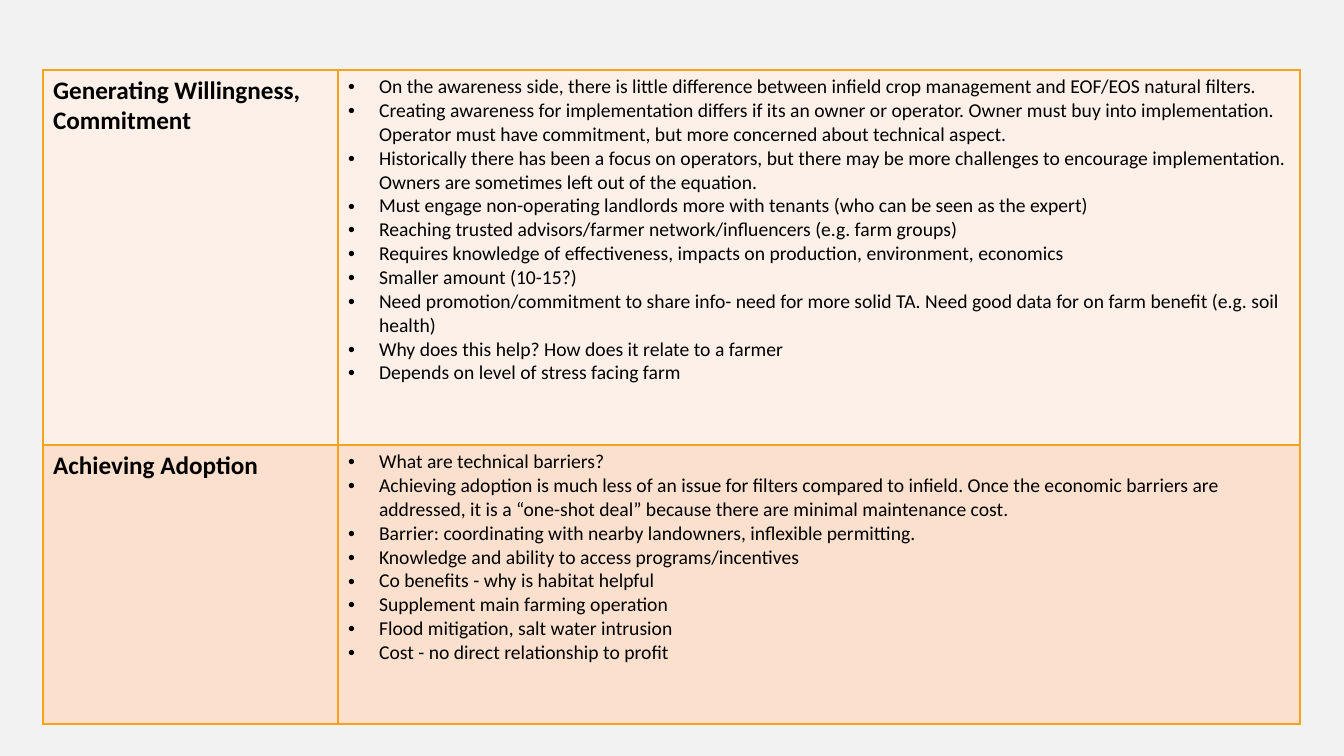
from dataclasses import dataclass

from lxml.etree import SubElement
from pptx import Presentation
from pptx.dml.color import RGBColor as Rgb
from pptx.oxml.ns import qn
from pptx.util import Pt

# Content: one (stage, points) pair per table row
STAGES = [
    ("Generating Willingness, Commitment", [
        "On the awareness side, there is little difference between infield crop management and EOF/EOS natural filters.",
        "Creating awareness for implementation differs if its an owner or operator. Owner must buy into implementation. "
        "Operator must have commitment, but more concerned about technical aspect.",
        "Historically there has been a focus on operators, but there may be more challenges to encourage implementation. "
        "Owners are sometimes left out of the equation.",
        "Must engage non-operating landlords more with tenants (who can be seen as the expert)",
        "Reaching trusted advisors/farmer network/influencers (e.g. farm groups)",
        "Requires knowledge of effectiveness, impacts on production, environment, economics",
        "Smaller amount (10-15?)",
        "Need promotion/commitment to share info- need for more solid TA. "
        "Need good data for on farm benefit (e.g. soil health)",
        "Why does this help? How does it relate to a farmer",
        "Depends on level of stress facing farm",
    ]),
    ("Achieving Adoption", [
        "What are technical barriers?",
        "Achieving adoption is much less of an issue for filters compared to infield. "
        "Once the economic barriers are addressed, it is a “one-shot deal” because there are minimal maintenance cost.",
        "Barrier: coordinating with nearby landowners, inflexible permitting.",
        "Knowledge and ability to access programs/incentives",
        "Co benefits - why is habitat helpful",
        "Supplement main farming operation",
        "Flood mitigation, salt water intrusion",
        "Cost - no direct relationship to profit",
    ]),
]


@dataclass(frozen=True)
class Theme:
    font: str = "Calibri"
    background: str = "F2F2F2"
    text: str = "000000"
    border: str = "F6A21D"
    bands: tuple = ("FDF0E8", "FBE0CD")
    stage_size: int = 18
    point_size: int = 14
    border_width: int = 1


THEME = Theme()

# Geometry in px
SLIDE_SIZE = (1344, 756)
TABLE_LEFT, TABLE_TOP = 43, 70
COLUMN_WIDTHS = (295, 962)
ROW_HEIGHTS = (375, 279)
BULLET_INDENT = 31


def px(length):
    return round(length * 914400 / 100.8)


def write_paragraphs(cell, lines, size, bold, bulleted):
    frame = cell.text_frame
    for index, line in enumerate(lines):
        paragraph = frame.paragraphs[0] if index == 0 else frame.add_paragraph()
        run = paragraph.add_run()
        run.text = line
        for attribute, value in {"name": THEME.font, "size": Pt(size), "bold": bold}.items():
            setattr(run.font, attribute, value)
        run.font.color.rgb = Rgb.from_string(THEME.text)
        if bulleted:
            properties = paragraph._p.get_or_add_pPr()
            properties.set("marL", str(px(BULLET_INDENT)))
            properties.set("indent", str(-px(BULLET_INDENT)))
            SubElement(properties, qn("a:buFont")).set("typeface", "Arial")
            SubElement(properties, qn("a:buChar")).set("char", "•")


def paint_cell(cell, fill):
    # Borders come before the fill in the cell properties
    properties = cell._tc.get_or_add_tcPr()
    for side in ("lnL", "lnR", "lnT", "lnB"):
        line = SubElement(properties, qn(f"a:{side}"), w=str(Pt(THEME.border_width)))
        SubElement(SubElement(line, qn("a:solidFill")), qn("a:srgbClr"), val=THEME.border)
    cell.fill.solid()
    cell.fill.fore_color.rgb = Rgb.from_string(fill)


# Slide and background
deck = Presentation()
deck.slide_width, deck.slide_height = map(px, SLIDE_SIZE)
slide = deck.slides.add_slide(deck.slide_layouts[6])
slide.background.fill.solid()
slide.background.fill.fore_color.rgb = Rgb.from_string(THEME.background)

# Table grid
stage_table = slide.shapes.add_table(
    len(STAGES), len(COLUMN_WIDTHS), px(TABLE_LEFT), px(TABLE_TOP),
    px(sum(COLUMN_WIDTHS)), px(sum(ROW_HEIGHTS))).table
stage_table.first_row = stage_table.horz_banding = False
for column, width in zip(stage_table.columns, COLUMN_WIDTHS):
    column.width = px(width)
for row, height in zip(stage_table.rows, ROW_HEIGHTS):
    row.height = px(height)

# Table cells
for row, (stage, points), band in zip(stage_table.rows, STAGES, THEME.bands):
    stage_cell, points_cell = row.cells
    write_paragraphs(stage_cell, [stage], THEME.stage_size, bold=True, bulleted=False)
    write_paragraphs(points_cell, points, THEME.point_size, bold=False, bulleted=True)
    for cell in (stage_cell, points_cell):
        paint_cell(cell, band)

deck.save("out.pptx")
